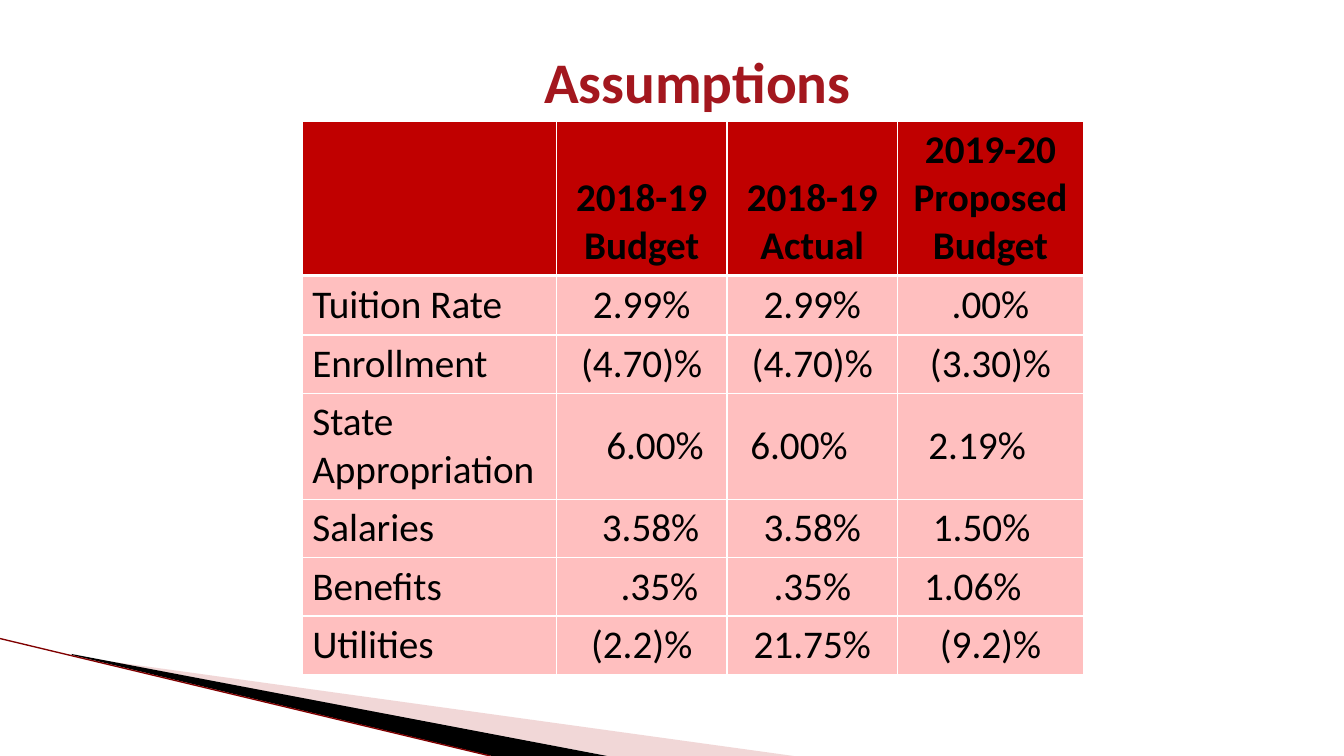
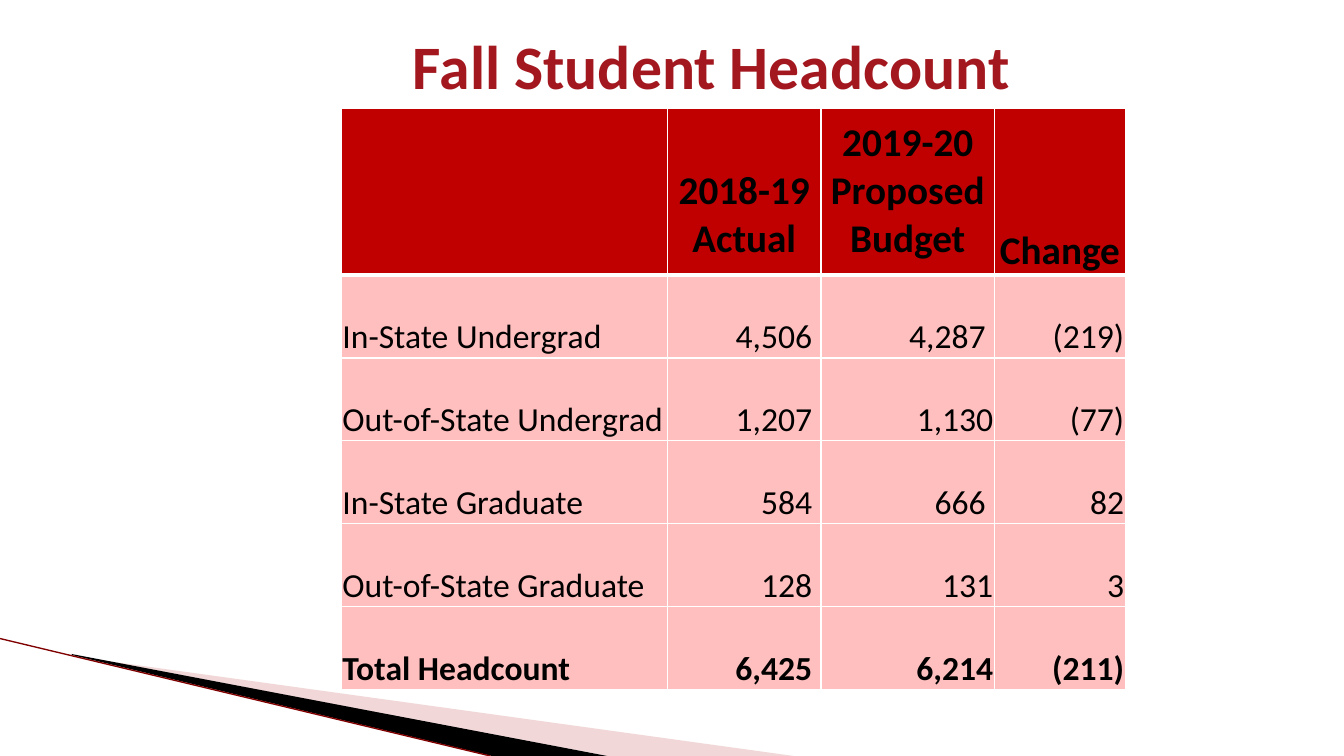
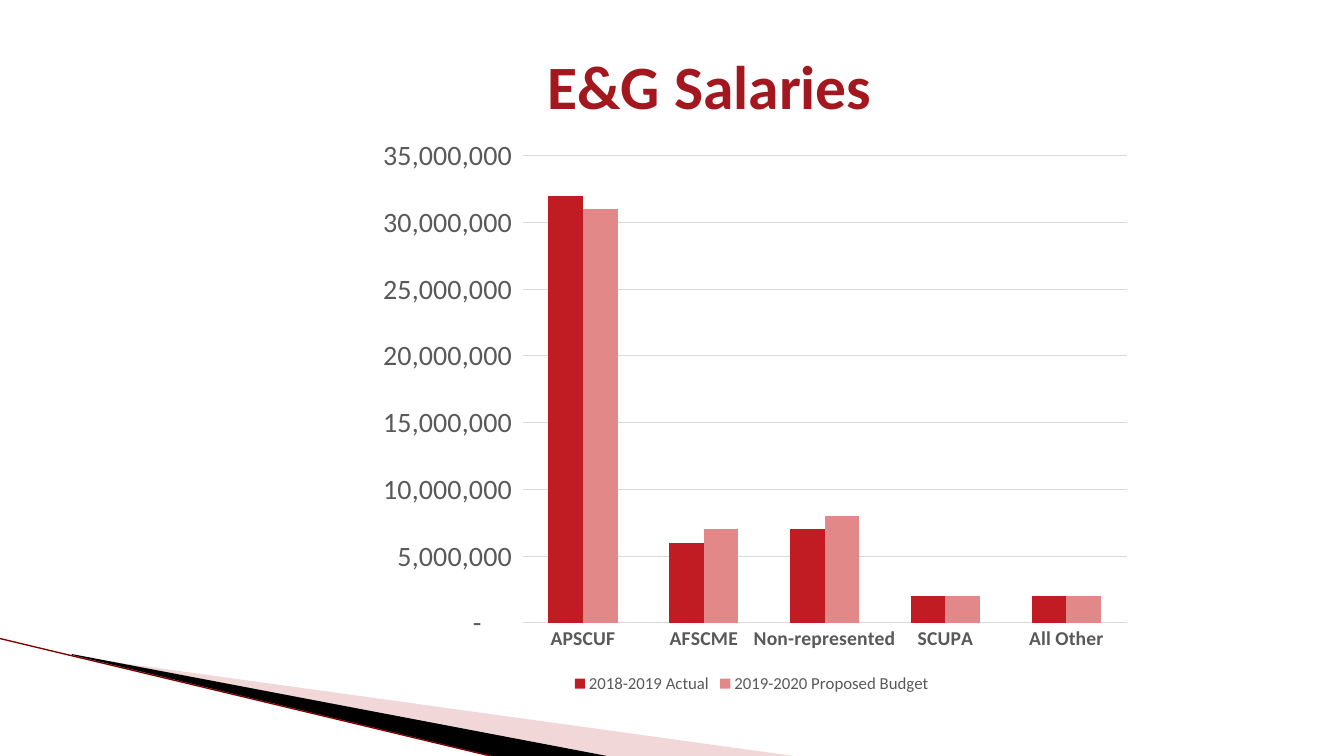
from lxml.etree import SubElement
from pptx import Presentation
from pptx.chart.data import CategoryChartData
from pptx.dml.color import RGBColor
from pptx.enum.chart import XL_CHART_TYPE, XL_LEGEND_POSITION, XL_TICK_MARK
from pptx.enum.shapes import MSO_CONNECTOR
from pptx.enum.text import MSO_ANCHOR, MSO_AUTO_SIZE, PP_ALIGN
from pptx.oxml.ns import qn
from pptx.util import Cm, Pt

COLOURS = {
    "title": "A3171E", "text": "000000", "header": "C00000", "body": "FFBFBF",
    "border": "FFFFFF", "wedge": "DD9D9D", "blade": "000000", "edge": "800000",
    "axis": "595959", "grid": "D9D9D9", "actual": "C11C24", "proposed": "E38889",
}
FONT = "Calibri"
SPACE_CM = 0.008  # width of one space, per point of text size
ACCOUNTING = '_(* #,##0_);_(* \\(#,##0\\);_(* "-"??_);_(@_)'


def colour(name):
    return RGBColor.from_string(COLOURS[name])


def format_font(font, size, ink="text", bold=False):
    font.name, font.size, font.bold = FONT, Pt(size), bold
    font.color.rgb = colour(ink)


def write(frame, text, align=PP_ALIGN.LEFT, **font_format):
    """Fill a text frame, one paragraph for each line of text."""
    for number, line in enumerate(text.split("\n")):
        para = frame.paragraphs[0] if number == 0 else frame.add_paragraph()
        para.alignment = align
        span = para.add_run()
        span.text = line
        format_font(span.font, **font_format)


def add_wedge(page, points, fill, opacity=None):
    start, *others = [(Cm(x), Cm(y)) for x, y in points]
    builder = page.shapes.build_freeform(*start)
    builder.add_line_segments(others, close=True)
    wedge = builder.convert_to_shape()
    wedge.shadow.inherit = False
    wedge.fill.solid()
    wedge.fill.fore_color.rgb = colour(fill)
    wedge.line.fill.background()
    if opacity:
        tint = wedge.element.spPr.find(qn("a:solidFill"))[0]
        SubElement(tint, qn("a:alpha"), val=str(opacity * 1000))
    return wedge


def add_edge(page, start, end):
    edge = page.shapes.add_connector(
        MSO_CONNECTOR.STRAIGHT, *[Cm(length) for length in (*start, *end)])
    edge.line.color.rgb = colour("edge")
    edge.line.width = Pt(0.95)
    SubElement(edge.element.spPr, qn("a:effectLst"))
    return edge


def decorate_layout(layout, page):
    """Draw the corner band and move it to the layout, behind its title."""
    for holder in list(layout.placeholders)[1:]:
        holder.element.getparent().remove(holder.element)
    band = [
        add_wedge(page, [(1.85, 16.54), (20, 19.05), (15.3, 19.05), (1.85, 16.51)],
                  "wedge", opacity=40),
        add_wedge(page, [(1.8, 16.48), (15.3, 19.05), (12.4, 19.05), (1.83, 16.51)],
                  "blade"),
        add_edge(page, (0, 16.09), (12.36, 19.05)),
    ]
    for position, shape in enumerate(band, start=2):
        layout.shapes.element.insert(position, shape.element)


def place_title(page, text, box, size):
    title = page.shapes.title
    title.left, title.top, title.width, title.height = [Cm(length) for length in box]
    frame = title.text_frame
    frame.auto_size = MSO_AUTO_SIZE.NONE
    frame.vertical_anchor = MSO_ANCHOR.MIDDLE
    write(frame, text, align=PP_ALIGN.CENTER, size=size, ink="title", bold=True)


def style_cell(cell, fill, top=1, bottom=1):
    properties = cell._tc.get_or_add_tcPr()
    for side, width in (("L", 1), ("R", 1), ("T", top), ("B", bottom)):
        line = SubElement(properties, qn(f"a:ln{side}"), w=str(Pt(width)))
        paint = SubElement(line, qn("a:solidFill"))
        SubElement(paint, qn("a:srgbClr"), val=COLOURS["border"])
    cell.fill.solid()
    cell.fill.fore_color.rgb = colour(fill)


def set_margins(cell, left, top, right, bottom):
    cell.margin_left, cell.margin_top = Cm(left), Cm(top)
    cell.margin_right, cell.margin_bottom = Cm(right), Cm(bottom)


def place_table(page, corner, widths, heights, rows, size, align, anchor,
                margins, header_bottoms, shifts, total=False):
    """Place a table; shifts gives, by cell, the spaces to pad left (+) or right (-)."""
    box = [Cm(length) for length in (*corner, sum(widths), sum(heights))]
    table = page.shapes.add_table(len(rows), len(widths), *box).table
    table.first_row = table.horz_banding = False
    for column, width in zip(table.columns, widths):
        column.width = Cm(width)
    for line, height in zip(table.rows, heights):
        line.height = Cm(height)
    for r, row in enumerate(rows):
        header = r == 0
        for c, text in enumerate(row):
            cell = table.cell(r, c)
            style_cell(cell, "header" if header else "body",
                       top=3 if r == 1 else 1, bottom=3 if header else 1)
            left, top, right, bottom = margins
            shift = shifts.get((r, c), 0) * size * SPACE_CM
            set_margins(cell, left + max(shift, 0), top, right + max(-shift, 0),
                        header_bottoms[c] if header else bottom)
            cell.vertical_anchor = MSO_ANCHOR.BOTTOM if header else anchor
            if text:
                cell_align = PP_ALIGN.CENTER if header else align if c else PP_ALIGN.LEFT
                write(cell.text_frame, text, align=cell_align,
                      size=28 if header else size,
                      bold=header or (total and r == len(rows) - 1))


def place_chart(page, box, categories, series):
    data = CategoryChartData(number_format=ACCOUNTING)
    data.categories = categories
    for name, values, _ in series:
        data.add_series(name, [value * 1_000_000 for value in values])
    chart = page.shapes.add_chart(
        XL_CHART_TYPE.COLUMN_CLUSTERED, *[Cm(length) for length in box], data).chart
    format_font(chart.font, 10)
    chart.has_title = False
    chart.has_legend = True
    chart.legend.position = XL_LEGEND_POSITION.BOTTOM
    chart.legend.include_in_layout = False
    format_font(chart.legend.font, 12, "axis")

    plot = chart.plots[0]
    plot.gap_width, plot.overlap, plot.vary_by_categories = 150, 0, False
    for bars, (_, _, fill) in zip(plot.series, series):
        bars.format.fill.solid()
        bars.format.fill.fore_color.rgb = colour(fill)

    names, amounts = chart.category_axis, chart.value_axis
    for axis in (names, amounts):
        axis.major_tick_mark = axis.minor_tick_mark = XL_TICK_MARK.NONE
    format_font(names.tick_labels.font, 14, "axis", bold=True)
    format_font(amounts.tick_labels.font, 20, "axis")
    names.format.line.color.rgb = colour("grid")
    names.format.line.width = Pt(0.75)
    label_body = names._element.find(qn("c:txPr")).find(qn("a:bodyPr"))
    label_body.set("rot", "-60000000")
    label_body.set("vert", "horz")
    amounts.format.line.fill.background()
    amounts.minimum_scale, amounts.maximum_scale = 0, 35_000_000
    amounts.major_unit = 5_000_000
    amounts.tick_labels.number_format = ACCOUNTING
    amounts.tick_labels.number_format_is_linked = False
    amounts.major_gridlines.format.line.color.rgb = colour("grid")
    amounts.major_gridlines.format.line.width = Pt(0.75)


def build_assumptions(page):
    place_title(page, "Assumptions", (6.15, 0.43, 22.86, 3.18), 41)
    place_table(
        page, (7.62, 3.06), (6.4, 4.3, 4.3, 4.68),
        (3.8, 1.5, 1.45, 2.66, 1.45, 1.45, 1.45),
        [
            ("", "2018-19 Budget", "2018-19 Actual", "2019-20 Proposed\nBudget"),
            ("Tuition Rate", "2.99%", "2.99%", ".00%"),
            ("Enrollment", "(4.70)%", "(4.70)%", "(3.30)%"),
            ("State Appropriation", "6.00%", "6.00%", "2.19%"),
            ("Salaries", "3.58%", "3.58%", "1.50%"),
            ("Benefits", ".35%", ".35%", "1.06%"),
            ("Utilities", "(2.2)%", "21.75%", "(9.2)%"),
        ],
        size=28, align=PP_ALIGN.CENTER, anchor=MSO_ANCHOR.MIDDLE,
        margins=(0.25, 0.13, 0.25, 0.13), header_bottoms=[0.13] * 4,
        shifts={(3, 1): 3, (3, 2): -3, (3, 3): -3, (4, 1): 2, (4, 3): -2,
                (5, 1): 4, (5, 3): -4})


def build_headcount(page):
    place_title(page, "Fall Student Headcount", (7.24, 0.51, 21.39, 2.24), 44.1)
    place_table(
        page, (8.6, 2.73), (8.22, 3.87, 4.37, 3.3), [4.2] + [2.09] * 5,
        [
            ("", "2018-19 Actual", "2019-20 Proposed Budget", "Change"),
            ("In-State Undergrad", "4,506", "4,287", "(219)"),
            ("Out-of-State Undergrad", "1,207", "1,130", "(77)"),
            ("In-State Graduate", "584", "666", "82"),
            ("Out-of-State Graduate", "128", "131", "3"),
            ("Total Headcount", "6,425", "6,214", "(211)"),
        ],
        size=24, align=PP_ALIGN.RIGHT, anchor=MSO_ANCHOR.BOTTOM,
        margins=(0.03, 0.03, 0.03, 0), header_bottoms=(0, 0.3, 0.3, 0),
        shifts={**{(r, 1): -1 for r in range(1, 6)}, (1, 2): -1, (3, 2): -1},
        total=True)


def build_salaries(page):
    place_title(page, "E&G Salaries", (9.1, 1.07, 17.58, 2.13), 44)
    place_chart(
        page, (9.1, 3.2, 19.69, 14.38),
        ["APSCUF", "AFSCME", "Non-represented", "SCUPA", "All Other"],
        [("2018-2019 Actual", (32, 6, 7, 2, 2), "actual"),
         ("2019-2020 Proposed Budget", (31, 7, 8, 2, 2), "proposed")])


def main():
    deck = Presentation()
    deck.slide_width, deck.slide_height = Cm(33.87), Cm(19.05)
    layout = deck.slide_layouts.get_by_name("Title Only")
    builders = (build_assumptions, build_headcount, build_salaries)
    pages = [deck.slides.add_slide(layout) for _ in builders]
    decorate_layout(layout, pages[0])
    for build, page in zip(builders, pages):
        build(page)
    deck.save("out.pptx")


if __name__ == "__main__":
    main()
